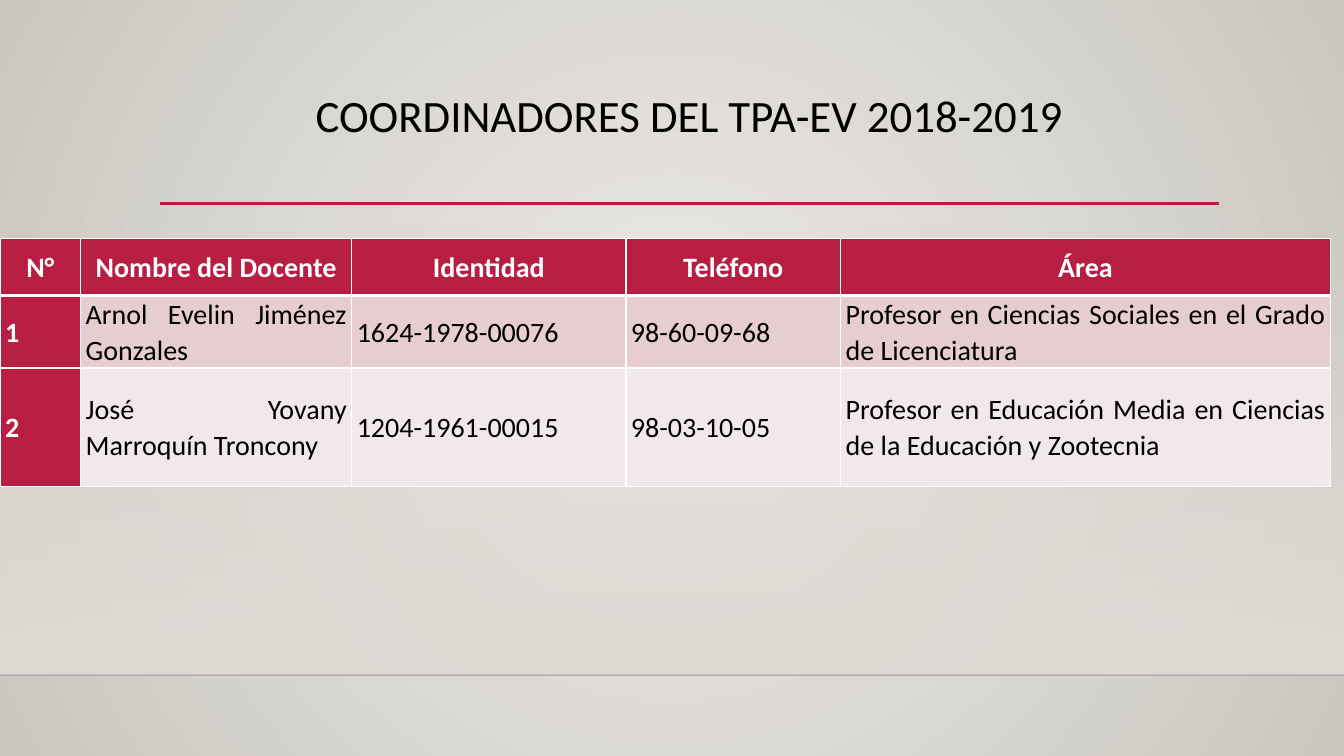
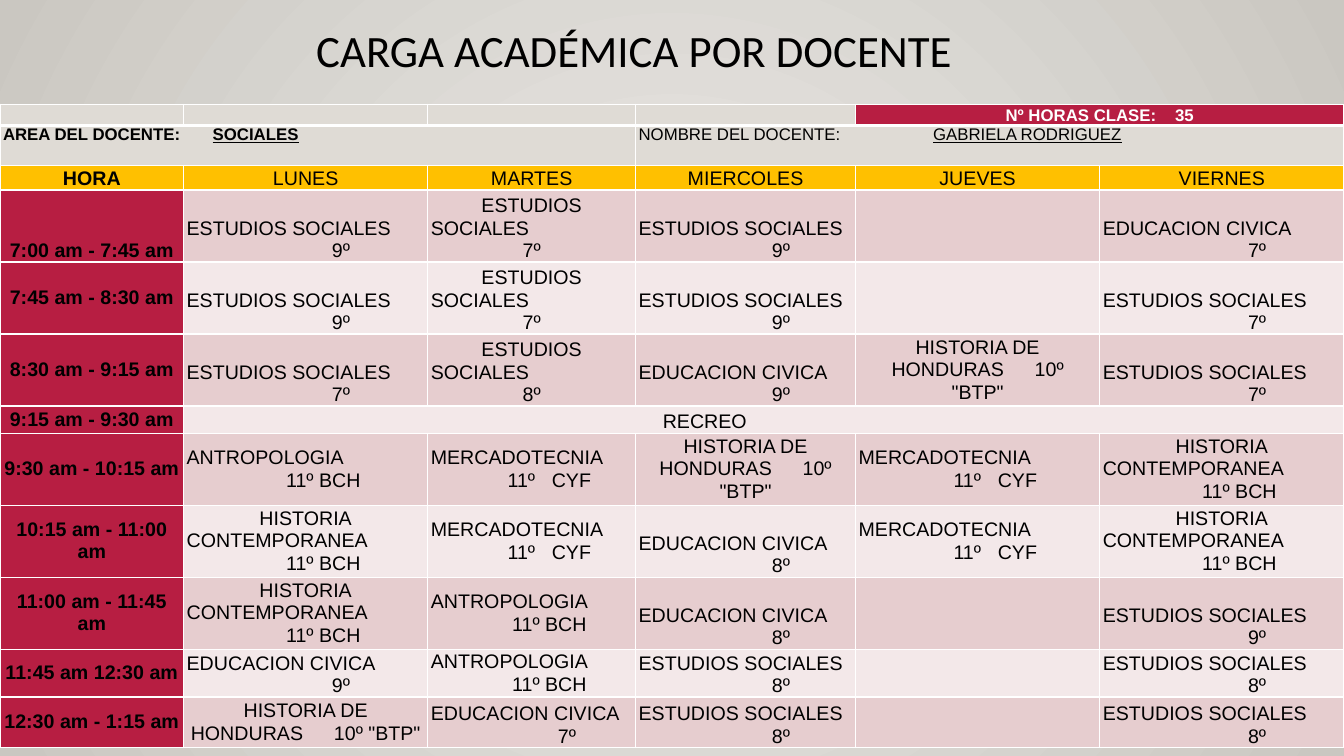
from lxml import etree
from pptx import Presentation
from pptx.dml.color import RGBColor
from pptx.enum.shapes import MSO_CONNECTOR, MSO_SHAPE
from pptx.enum.text import MSO_ANCHOR, PP_ALIGN
from pptx.oxml.ns import qn
from pptx.util import Inches, Pt

SLIDE_W, SLIDE_H = Inches(13.33), Inches(7.5)
CENTER, LEFT, JUSTIFY = PP_ALIGN.CENTER, PP_ALIGN.LEFT, PP_ALIGN.JUSTIFY
TOP, MIDDLE, BOTTOM = MSO_ANCHOR.TOP, MSO_ANCHOR.MIDDLE, MSO_ANCHOR.BOTTOM

BLACK = RGBColor(0x00, 0x00, 0x00)
HORIZON = RGBColor(0x00, 0x00, 0x01)
WHITE = RGBColor(0xFF, 0xFF, 0xFF)
CRIMSON = RGBColor(0xB7, 0x1E, 0x42)
ROSE = RGBColor(0xE6, 0xCD, 0xCF)
PALE_ROSE = RGBColor(0xF3, 0xE8, 0xE9)
AMBER = RGBColor(0xFF, 0xC0, 0x00)
SAND = RGBColor(0xDF, 0xDB, 0xD5)
GLOW = RGBColor(0xEC, 0xEA, 0xE7)
STONE = RGBColor(0xCA, 0xC7, 0xC1)
BANDS = (ROSE, PALE_ROSE)

# Teachers
TEACHER_COLUMNS = (0.8, 2.69, 2.72, 2.13, 4.86)
TEACHER_ROWS = (0.57, 0.72, 1.18)
TEACHERS = (
    ("N°", "Nombre del Docente", "Identidad", "Teléfono", "Área"),
    ("1", "Arnol Evelin Jiménez Gonzales", "1624-1978-00076", "98-60-09-68",
     "Profesor en Ciencias Sociales en el Grado de Licenciatura"),
    ("2", "José Yovany Marroquín Troncony", "1204-1961-00015", "98-03-10-05",
     "Profesor en Educación Media en Ciencias de la Educación y Zootecnia"),
)

# Timetable: "|" parts lines, "~" is a wide gap
SOCIAL, SOCIAL_SPLIT = "ESTUDIOS SOCIALES|", "ESTUDIOS|SOCIALES|"
CIVICS = "EDUCACION CIVICA|"
ANTHROPOLOGY = "ANTROPOLOGIA|11º BCH"
MARKETING = "MERCADOTECNIA|11º~CYF"
MODERN = "HISTORIA|CONTEMPORANEA|11º BCH"
HONDURAS = 'HISTORIA DE|HONDURAS~10º|"BTP"'
HONDURAS_WIDE = 'HISTORIA DE|HONDURAS~10º "BTP"'
DAYS = ("HORA", "LUNES", "MARTES", "MIERCOLES", "JUEVES", "VIERNES")
HOUR_COLUMNS = (1.82, 2.42, 2.06, 2.18, 2.42, 2.42)
HOUR_ROWS = (0.21, 0.4, 0.24, 0.7, 0.7, 0.7, 0.27, 0.7, 0.7, 0.7, 0.47, 0.5)
LESSONS = (
    ("7:00 am - 7:45 am", SOCIAL + "9º", SOCIAL_SPLIT + "7º", SOCIAL + "9º", "", CIVICS + "7º"),
    ("7:45 am - 8:30 am", SOCIAL + "9º", SOCIAL_SPLIT + "7º", SOCIAL + "9º", "", SOCIAL + "7º"),
    ("8:30 am - 9:15 am", SOCIAL + "7º", SOCIAL_SPLIT + "8º", CIVICS + "9º", HONDURAS, SOCIAL + "7º"),
    ("9:15 am - 9:30 am", "RECREO"),
    ("9:30 am - 10:15 am", ANTHROPOLOGY, MARKETING, HONDURAS, MARKETING, MODERN),
    ("10:15 am - 11:00 am", MODERN, MARKETING, CIVICS + "8º", MARKETING, MODERN),
    ("11:00 am - 11:45 am", MODERN, ANTHROPOLOGY, CIVICS + "8º", "", SOCIAL + "9º"),
    ("11:45 am 12:30 am", CIVICS + "9º", ANTHROPOLOGY, SOCIAL + "8º", "", SOCIAL + "8º"),
    ("12:30 am - 1:15 am", HONDURAS_WIDE, CIVICS + "7º", SOCIAL + "8º", "", SOCIAL + "8º"),
)


def share(x, y, w, h):
    """Turn shares of the slide into lengths."""
    return round(SLIDE_W * x), round(SLIDE_H * y), round(SLIDE_W * w), round(SLIDE_H * h)


def set_alpha(color_parent, percent):
    color = next(color_parent.iter(qn("a:srgbClr")))
    etree.SubElement(color, qn("a:alpha"), val=str(percent * 1000))


def add_rule(slide, x, y, w, color, width):
    left, top, length, _ = share(x, y, w, 0)
    rule = slide.shapes.add_connector(MSO_CONNECTOR.STRAIGHT, left, top, left + length, top)
    rule.line.color.rgb = color
    rule.line.width = Pt(width)
    etree.SubElement(rule.element.spPr, qn("a:effectLst"))
    return rule


def set_stops(fill, first, last):
    fill.gradient()
    for stop, color in zip(fill.gradient_stops, (first, last)):
        stop.color.rgb = color


def build_master(prs, slide):
    """Give the master its backdrop; its shapes are drawn on a slide, then moved."""
    master = prs.slide_master
    set_stops(master.background.fill, GLOW, STONE)
    gradient = next(master.element.iter(qn("a:gradFill")))
    gradient.remove(gradient.find(qn("a:lin")))
    circle = etree.SubElement(gradient, qn("a:path"))
    circle.set("path", "circle")
    etree.SubElement(circle, qn("a:fillToRect"), l="50000", t="50000", r="50000", b="50000")

    # Floor panel fading in from the top
    panel = slide.shapes.add_shape(MSO_SHAPE.RECTANGLE, *share(0, 0.295, 1, 0.598))
    panel.shadow.inherit = False
    panel.line.fill.background()
    set_stops(panel.fill, SAND, SAND)
    panel.fill.gradient_angle = 270
    set_alpha(panel.element.spPr, 0)

    # Horizon and title rule
    horizon = add_rule(slide, 0, 0.893, 1, HORIZON, 1)
    set_alpha(horizon.element.spPr, 20)
    title_rule = add_rule(slide, 0.119, 0.269, 0.788, CRIMSON, 2.5)
    tree = master.element.cSld.spTree
    for position, part in enumerate((panel, horizon, title_rule), start=2):
        tree.insert(position, part.element)


def style_run(run, size, font, color, bold=False, underline=None):
    run.font.size = Pt(size)
    run.font.name = font
    run.font.color.rgb = color
    run.font.bold = bold
    run.font.underline = underline


def add_title(slide, text, x, y):
    frame = slide.shapes.add_textbox(*share(x, y, 0.788, 0.153)).text_frame
    frame.word_wrap = True
    frame.vertical_anchor = TOP
    title = frame.paragraphs[0]
    title.text = text
    title.alignment = CENTER
    title.line_spacing = 0.9
    style_run(title.runs[0], 32, "Calibri", BLACK)


def add_grid(slide, box, columns, rows):
    """Add a table whose columns and rows share out the box by weight."""
    left, top, width, height = share(*box)
    table = slide.shapes.add_table(len(rows), len(columns), left, top, width, height).table
    for column, weight in zip(table.columns, columns):
        column.width = round(width * weight / sum(columns))
    for row, weight in zip(table.rows, rows):
        row.height = round(height * weight / sum(rows))
    for index, row in enumerate(table.rows):
        for cell in row.cells:
            add_borders(cell, 3 if index == 0 else 1, 3 if index == 1 else 1)
    return table


def add_borders(cell, bottom, top):
    properties = cell._tc.get_or_add_tcPr()
    for side, width in (("L", 1), ("R", 1), ("T", top), ("B", bottom)):
        line = etree.SubElement(properties, qn("a:ln" + side), w=str(Pt(width)))
        fill = etree.SubElement(line, qn("a:solidFill"))
        etree.SubElement(fill, qn("a:srgbClr"), val=str(WHITE))


def set_cell(cell, fill, anchor, inset):
    cell.fill.solid()
    cell.fill.fore_color.rgb = fill
    cell.vertical_anchor = anchor
    cell.margin_left = cell.margin_right = Inches(inset)
    cell.margin_top = cell.margin_bottom = 0


def write_line(paragraph, text, align, size, font, color, bold=False, spacing=1.0, gap=18):
    """Write one paragraph; each "~" becomes a space widened by gap points."""
    paragraph.alignment = align
    paragraph.line_spacing = spacing
    if not text:
        etree.SubElement(paragraph._p, qn("a:endParaRPr"), sz=str(size * 100))
        return
    for index, part in enumerate(text.split("~")):
        if index:
            space = paragraph.add_run()
            space.text = " "
            style_run(space, size, font, color)
            space.font._element.set("spc", str(gap * 100))
        run = paragraph.add_run()
        run.text = part
        style_run(run, size, font, color, bold)


def fill_teachers(slide, box):
    table = add_grid(slide, box, TEACHER_COLUMNS, TEACHER_ROWS)
    for r, teacher in enumerate(TEACHERS):
        for c, text in enumerate(teacher):
            heading = r == 0 or c == 0
            cell = table.cell(r, c)
            set_cell(cell, CRIMSON if heading else BANDS[(r - 1) % 2], MIDDLE, 0.05)
            write_line(cell.text_frame.paragraphs[0], text, JUSTIFY if r else CENTER,
                       20, "Calibri", WHITE if heading else BLACK, heading, 1.05)


def write_field(cell, label, value, tab, bold):
    """Write a label, then an underlined value at a tab stop."""
    paragraph = cell.text_frame.paragraphs[0]
    write_line(paragraph, label, LEFT, 12, "Arial", BLACK, bold)
    tabs = etree.SubElement(paragraph._p.get_or_add_pPr(), qn("a:tabLst"))
    etree.SubElement(tabs, qn("a:tab"), pos=str(Inches(tab)), algn="l")
    run = paragraph.add_run()
    run.text = "\t" + value
    style_run(run, 12, "Arial", BLACK, bold, True)


def write_lesson(cell, lesson):
    """Subject lines first, then the class, set off to the right."""
    lines = lesson.split("|")
    last = len(lines) - 1
    centered = lesson.startswith("HISTORIA DE") or last == 0
    plain_grade = lines[-1].endswith("º")
    frame = cell.text_frame
    for index, line in enumerate(lines):
        paragraph = frame.add_paragraph() if index else frame.paragraphs[0]
        subject_end = index == last - 1 and not centered
        if index == last and not centered:
            shift = 0.35 if not plain_grade else 0 if last == 2 else 0.7
            paragraph._p.get_or_add_pPr().set("marL", str(Inches(shift)))
        write_line(paragraph, line, LEFT if subject_end else CENTER, 14, "Arial", BLACK,
                   spacing=1.03 if index else 1.0, gap=18 if centered else 8)
    cell.vertical_anchor = BOTTOM if plain_grade or last == 0 else MIDDLE


def fill_timetable(slide, box):
    table = add_grid(slide, box, HOUR_COLUMNS, HOUR_ROWS)

    # Hours taught
    for c in range(len(DAYS)):
        set_cell(table.cell(0, c), SAND if c < 4 else CRIMSON, BOTTOM, 0.03)
        if c < 4:
            write_line(table.cell(0, c).text_frame.paragraphs[0], "", CENTER, 12, "Arial", BLACK)
    table.cell(0, 4).merge(table.cell(0, 5))
    write_line(table.cell(0, 4).text_frame.paragraphs[0], "Nº HORAS CLASE:~35",
               CENTER, 12, "Arial", WHITE, True, gap=10)

    # Area and teacher
    for c, field in ((0, ("AREA DEL DOCENTE: ", "SOCIALES", 2.08, True)),
                     (3, ("NOMBRE DEL DOCENTE:", "GABRIELA RODRIGUEZ", 2.92, False))):
        cell = table.cell(1, c)
        cell.merge(table.cell(1, c + 2))
        set_cell(cell, SAND, TOP, 0.03)
        write_field(cell, *field)

    # Days
    for c, day in enumerate(DAYS):
        set_cell(table.cell(2, c), AMBER, BOTTOM, 0.03)
        write_line(table.cell(2, c).text_frame.paragraphs[0], day, CENTER, 14, "Arial", BLACK, c == 0)

    # Lessons
    for r, (hour, *lessons) in enumerate(LESSONS):
        hour_cell = table.cell(r + 3, 0)
        set_cell(hour_cell, CRIMSON, MIDDLE if r else BOTTOM, 0.03)
        write_line(hour_cell.text_frame.paragraphs[0], hour, CENTER, 14, "Arial", BLACK, True)
        for c, lesson in enumerate(lessons, start=1):
            cell = table.cell(r + 3, c)
            set_cell(cell, BANDS[r % 2], BOTTOM, 0.03)
            write_lesson(cell, lesson)
        if len(lessons) == 1:
            recess = table.cell(r + 3, 1)
            recess.merge(table.cell(r + 3, len(DAYS) - 1))
            recess.margin_right = Inches(1.2)


def main():
    prs = Presentation()
    prs.slide_width, prs.slide_height = SLIDE_W, SLIDE_H
    blank = prs.slide_layouts[6]

    coordinators = prs.slides.add_slide(blank)
    build_master(prs, coordinators)
    add_title(coordinators, "COORDINADORES DEL TPA-EV 2018-2019", 0.119, 0.117)
    fill_teachers(coordinators, (0, 0.315, 0.99, 0.329))

    workload = prs.slides.add_slide(blank)
    add_title(workload, "CARGA ACADÉMICA POR DOCENTE", 0.078, 0.032)
    fill_timetable(workload, (0, 0.138, 1, 0.839))
    prs.save("out.pptx")


if __name__ == "__main__":
    main()
